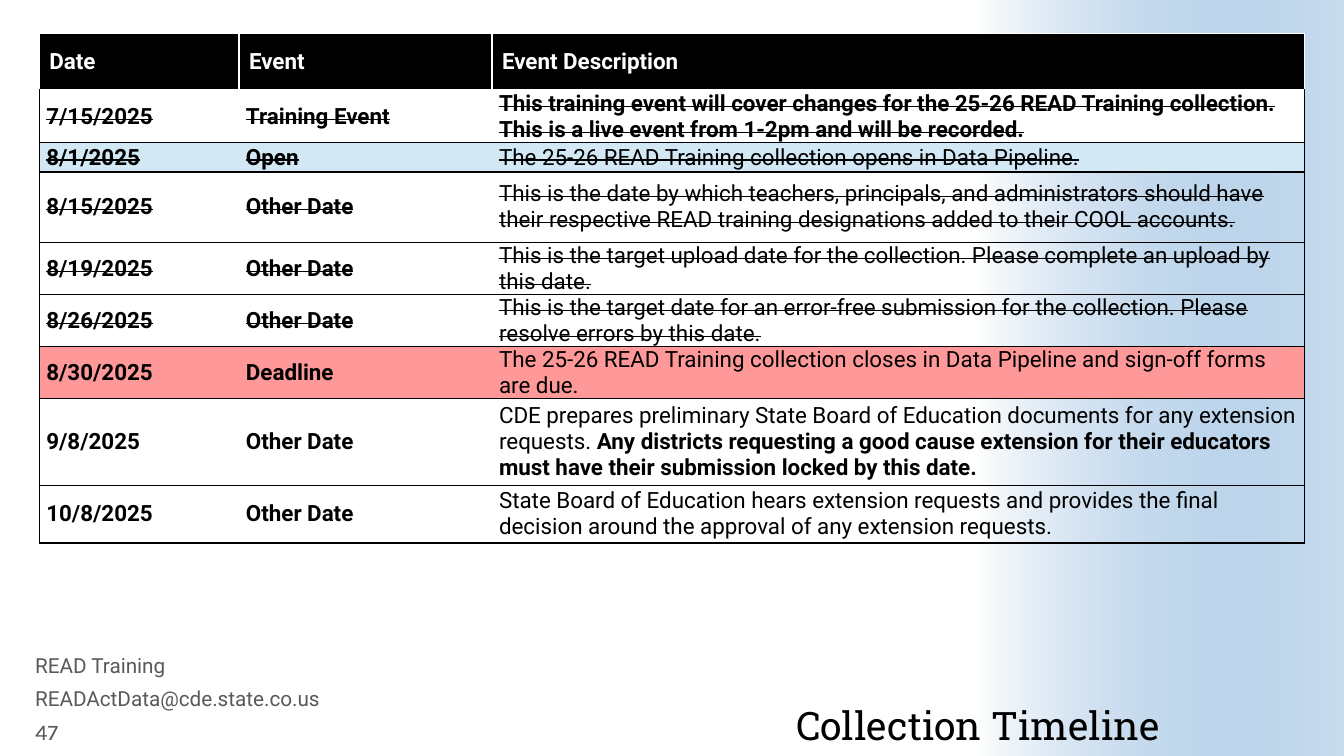
from dataclasses import dataclass
from lxml import etree
from pptx import Presentation, util as u
from pptx.dml.color import RGBColor
from pptx.enum import shapes, text
from pptx.oxml.ns import qn


@dataclass(frozen=True)
class Theme:
    black: str = "000000"
    white: str = "FFFFFF"
    gray: str = "595959"
    blue: str = "488BC9"
    open: str = "D2E9F5"
    due: str = "FF9999"
    body: str = "Roboto"
    head: str = "Roboto Slab"
    page: str = "Karla"
    big: float = 28
    cell: float = 16
    small: float = 14.8


class Deck:
    """Build the slide from a theme, one method per kind of element."""

    def __init__(self, theme):
        self.theme = theme
        self.prs = Presentation()
        self.prs.slide_width = u.Inches(13.33)
        self.prs.slide_height = u.Inches(7.5)
        self.slide = self.prs.slides.add_slide(self.prs.slide_layouts[5])

    def font(self, para, face, size, color, bold=False):
        font = para.font
        font.name, font.size, font.bold = face, u.Pt(size), bold
        font.color.rgb = RGBColor.from_string(color)

    def place(self, shape, box):
        shape.left, shape.top, shape.width, shape.height = map(u.Inches, box)

    def wash(self, box):
        t, tree = self.theme, self.slide.shapes
        rect = tree.add_shape(shapes.MSO_SHAPE.RECTANGLE, *map(u.Inches, box))
        rect.rotation = 270
        rect.shadow.inherit = False
        rect.line.fill.background()
        rect.fill.gradient()
        rect.fill.gradient_angle = 270
        for stop, color in zip(rect.fill.gradient_stops, (t.white, t.blue)):
            stop.color.rgb = RGBColor.from_string(color)
        tint = rect._element.findall(".//" + qn("a:srgbClr"))[1]
        etree.SubElement(tint, qn("a:alpha"), val="30000")
        tree._spTree.insert(2, rect._element)

    def title(self, words, box):
        t, shape = self.theme, self.slide.shapes.title
        self.place(shape, box)
        frame = shape.text_frame
        frame.margin_left = frame.margin_right = 0
        frame.margin_top = frame.margin_bottom = 0
        frame.vertical_anchor = text.MSO_ANCHOR.BOTTOM
        frame.word_wrap = True
        frame.text = words
        para = frame.paragraphs[0]
        para.alignment = text.PP_ALIGN.RIGHT
        para.line_spacing = 0.9
        self.font(para, t.head, t.big, t.black)

    def label(self, words, box, face, size, space=1.0):
        frame = self.slide.shapes.add_textbox(*map(u.Inches, box)).text_frame
        frame.word_wrap = True
        frame.vertical_anchor = text.MSO_ANCHOR.MIDDLE
        frame.text = words
        para = frame.paragraphs[0]
        para.line_spacing = space
        self.font(para, face, size, self.theme.gray)

    def edge(self, cell, sides):
        props = cell._tc.get_or_add_tcPr()
        for spot, side in enumerate("LRTB"):
            color, width = sides.get(side, (None, 1))
            line = etree.Element(qn("a:ln" + side), w=str(u.Pt(width)))
            kind = "a:solidFill" if color else "a:noFill"
            fill = etree.SubElement(line, qn(kind))
            if color:
                etree.SubElement(fill, qn("a:srgbClr"), val=color)
            props.insert(spot, line)

    def cell(self, cell, parts, color, fill, sides, strike=False):
        t = self.theme
        cell.vertical_anchor = text.MSO_ANCHOR.MIDDLE
        para = cell.text_frame.paragraphs[0]
        for words, bold in parts:
            run = para.add_run()
            run.text = words
            if len(parts) > 1:
                run.font.bold = bold
            if strike:
                run._r.get_or_add_rPr().set("strike", "sngStrike")
        self.font(para, t.body, t.cell, color, parts[0][1])
        if fill:
            cell.fill.solid()
            cell.fill.fore_color.rgb = RGBColor.from_string(fill)
        else:
            cell.fill.background()
        self.edge(cell, sides)

    def table(self, box, cols, highs, heads, rows):
        t = self.theme
        grid = self.slide.shapes.add_table(
            len(highs), len(cols), *map(u.Inches, box)).table
        grid.horz_banding = False
        for col, wide in zip(grid.columns, cols):
            col.width = u.Inches(wide)
        for row, high in zip(grid.rows, highs):
            row.height = u.Inches(high)
        pale, dark = (t.white, 1), (t.black, 1)
        sides = {"L": pale, "R": pale, "T": pale, "B": (t.white, 3)}
        for c, words in enumerate(heads):
            self.cell(grid.cell(0, c), [(words, True)], t.white, t.black, sides)
        for r, (date, event, notes, fill, strike) in enumerate(rows, 1):
            for c, parts in enumerate(([(date, True)], [(event, True)], notes)):
                sides = {"T": pale if r == 1 else dark, "B": dark}
                if c == 0:
                    sides["L"] = dark
                if c == len(cols) - 1:
                    sides["R"] = dark
                item = grid.cell(r, c)
                item.margin_left = item.margin_right = u.Inches(0.07)
                item.margin_top = item.margin_bottom = 0
                self.cell(item, parts, t.black, fill, sides, strike)


def main():
    t = Theme()
    deck = Deck(t)
    deck.wash((7.75, 1.92, 7.5, 3.66))
    deck.title("Collection Timeline", (4.26, 6.45, 7.24, 0.98))
    rows = [
        ("7/15/2025", "Training Event", [("This training event will cover changes for the 25-26 READ Training collection. This is a live event from 1-2pm and will be recorded.", True)], t.white, True),
        ("8/1/2025", "Open", [("The 25-26 READ Training collection opens in Data Pipeline.", False)], t.open, True),
        ("8/15/2025", "Other Date", [("This is the date by which teachers, principals, and administrators should have their respective READ training designations added to their COOL accounts.", False)], None, True),
        ("8/19/2025", "Other Date", [("This is the target upload date for the collection. Please complete an upload by this date.", False)], None, True),
        ("8/26/2025", "Other Date", [("This is the target date for an error-free submission for the collection. Please resolve errors by this date.", False)], None, True),
        ("8/30/2025", "Deadline", [("The 25-26 READ Training collection closes in Data Pipeline and sign-off forms are due.", False)], t.due, False),
        ("9/8/2025", "Other Date", [
            ("CDE prepares preliminary State Board of Education documents for any extension requests. ", False),
            ("Any districts requesting a good cause extension for their educators must have their submission locked by this date.", True)], None, False),
        ("10/8/2025", "Other Date", [("State Board of Education hears extension requests and provides the final decision around the approval of any extension requests.", False)], None, False),
    ]
    deck.table((0.39, 0.33, 12.55, 5.12), (1.98, 2.51, 8.06),
               (0.57, 0.44, 0.29, 0.7, 0.44, 0.44, 0.44, 0.86, 0.57),
               ("Date", "Event", "Event Description"), rows)
    for n, words in enumerate(("READ Training", "READActData@cde.state.co.us")):
        deck.label(words, (0.25, 6.47 + 0.32 * n, 3.89, 0.31),
                   t.body, t.small, 0.8)
    deck.label("47", (0.25, 7.1, 0.85, 0.31), t.page, t.cell)
    deck.prs.save("out.pptx")


if __name__ == "__main__":
    main()
